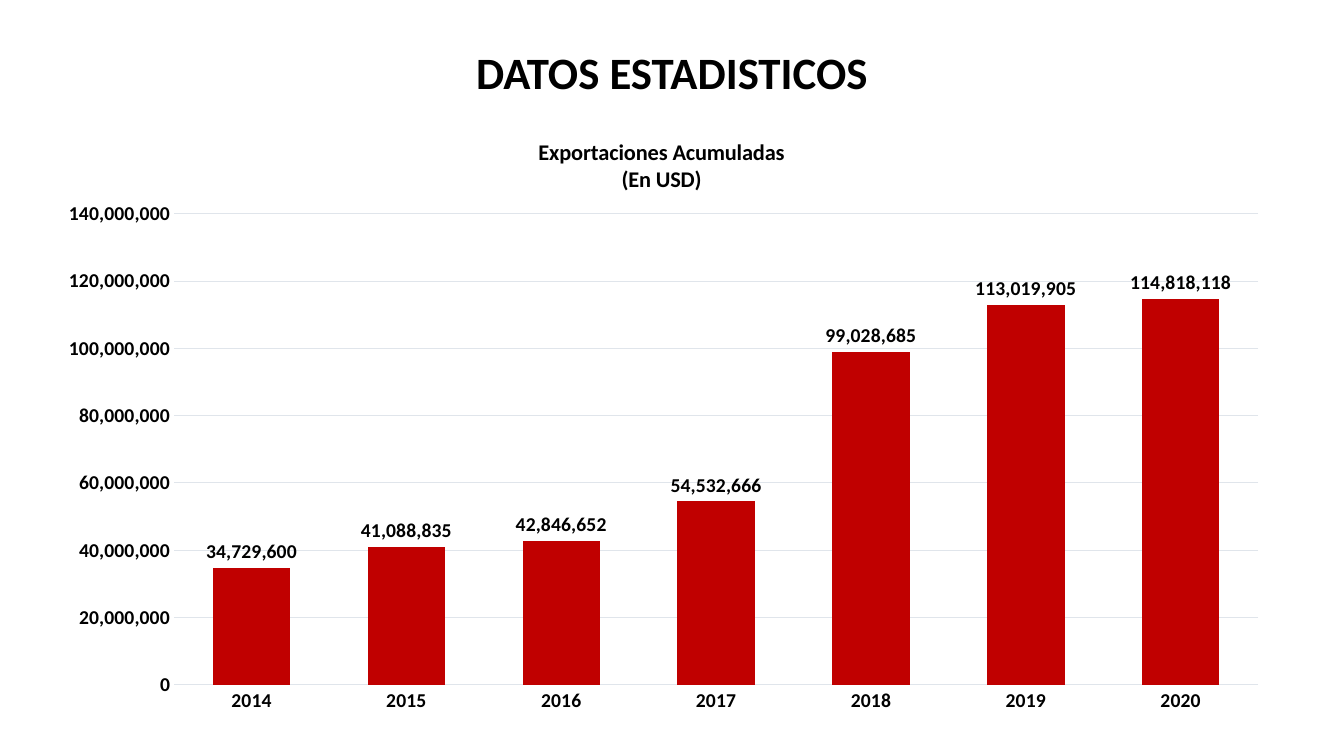
from dataclasses import dataclass

from lxml import etree
from pptx import Presentation
from pptx.chart.data import CategoryChartData
from pptx.dml.color import RGBColor
from pptx.enum.chart import XL_CHART_TYPE as ChartType
from pptx.enum.chart import XL_LABEL_POSITION as LabelPosition
from pptx.enum.chart import XL_TICK_MARK as TickMark
from pptx.enum.text import MSO_ANCHOR as Anchor
from pptx.enum.text import PP_ALIGN as Align
from pptx.oxml.ns import qn
from pptx.util import Pt


@dataclass(frozen=True)
class Theme:
    """Colours, typeface and type sizes of the slide."""
    ink: RGBColor = RGBColor(0, 0, 0)
    bar: RGBColor = RGBColor(0xC0, 0, 0)
    grid: RGBColor = RGBColor(0xE0, 0xE5, 0xEB)
    face: str = "Calibri"
    heading: int = 32
    caption: int = 16
    label: int = 14


@dataclass(frozen=True)
class Box:
    """A region of the slide, in points."""
    left: float
    top: float
    width: float
    height: float

    def lengths(self):
        """Return the four lengths for a python-pptx call."""
        return Pt(self.left), Pt(self.top), Pt(self.width), Pt(self.height)


THEME = Theme()
EXPORTS = {
    "2014": 34729600,
    "2015": 41088835,
    "2016": 42846652,
    "2017": 54532666,
    "2018": 99028685,
    "2019": 113019905,
    "2020": 114818118,
}


def style_font(font, size):
    """Apply the bold black type of the slide."""
    font.name = THEME.face
    font.size = Pt(size)
    font.bold = True
    font.color.rgb = THEME.ink


def style_line(line):
    """Draw a line in the pale grid colour."""
    line.color.rgb = THEME.grid
    line.width = Pt(0.75)


def set_layout(parent, index, **values):
    """Place a chart part by fractions of the chart area."""
    for old in parent.findall(qn("c:layout")):
        parent.remove(old)
    layout = etree.Element(qn("c:layout"))
    manual = etree.SubElement(layout, qn("c:manualLayout"))
    for name, value in values.items():
        etree.SubElement(manual, qn(f"c:{name}")).set("val", str(value))
    parent.insert(index, layout)


def add_heading(page, box, text):
    """Write the centred slide heading."""
    frame = page.shapes.add_textbox(*box.lengths()).text_frame
    frame.word_wrap = True
    frame.vertical_anchor = Anchor.MIDDLE
    para = frame.paragraphs[0]
    para.alignment = Align.CENTER
    para.line_spacing = 0.9
    span = para.add_run()
    span.text = text
    style_font(span.font, THEME.heading)


def add_caption(chart, lines):
    """Write the chart title, one paragraph per line."""
    chart.has_title = True
    title = chart.chart_title
    frame = title.text_frame
    for number, line in enumerate(lines):
        para = frame.add_paragraph() if number else frame.paragraphs[0]
        para.alignment = Align.CENTER
        span = para.add_run()
        span.text = line
        style_font(span.font, THEME.caption)
    title.include_in_layout = False
    set_layout(title._element, 1, xMode="edge", yMode="edge", x=0.4, y=0.04)


def style_axes(chart):
    """Format the year axis and the value axis with its grid."""
    years, amounts = chart.category_axis, chart.value_axis
    for axis in (years, amounts):
        axis.major_tick_mark = axis.minor_tick_mark = TickMark.NONE
        style_font(axis.tick_labels.font, THEME.label)
    style_line(years.format.line)
    amounts.format.line.fill.background()
    style_line(amounts.major_gridlines.format.line)
    amounts.minimum_scale = 0
    amounts.maximum_scale = 140_000_000
    amounts.major_unit = 20_000_000
    amounts.tick_labels.number_format = "#,##0"
    amounts.tick_labels.number_format_is_linked = False


def style_bars(plot):
    """Colour the columns and put their values above them."""
    plot.gap_width = 100
    plot.overlap = -24
    plot.vary_by_categories = False
    bars = plot.series[0]
    bars.format.fill.solid()
    bars.format.fill.fore_color.rgb = THEME.bar
    labels = bars.data_labels
    labels.show_value = True
    labels.position = LabelPosition.OUTSIDE_END
    labels.number_format = "#,##0"
    labels.number_format_is_linked = False
    style_font(labels.font, THEME.label)


def add_exports_chart(page, box):
    """Build the column chart of yearly exports."""
    data = CategoryChartData(number_format="#,##0")
    data.categories = list(EXPORTS)
    data.add_series("Series 1", list(EXPORTS.values()))
    chart = page.shapes.add_chart(
        ChartType.COLUMN_CLUSTERED, *box.lengths(), data).chart
    chart.has_legend = False
    style_font(chart.font, THEME.label)
    add_caption(chart, ["Exportaciones Acumuladas", "(En USD)"])
    style_axes(chart)
    style_bars(chart.plots[0])
    plot_area = chart.element.find(".//" + qn("c:plotArea"))
    set_layout(plot_area, 0, layoutTarget="inner", xMode="edge", yMode="edge",
               x=0.11, y=0.17, w=0.87, h=0.77)


def main():
    """Assemble and save the slide."""
    deck = Presentation()
    deck.slide_width, deck.slide_height = Pt(960), Pt(540)
    page = deck.slides.add_slide(deck.slide_layouts[6])
    add_heading(page, Box(66, 1.5, 828, 104.5), "DATOS ESTADISTICOS")
    add_exports_chart(page, Box(26.5, 78.5, 890, 437))
    deck.save("out.pptx")


if __name__ == "__main__":
    main()
